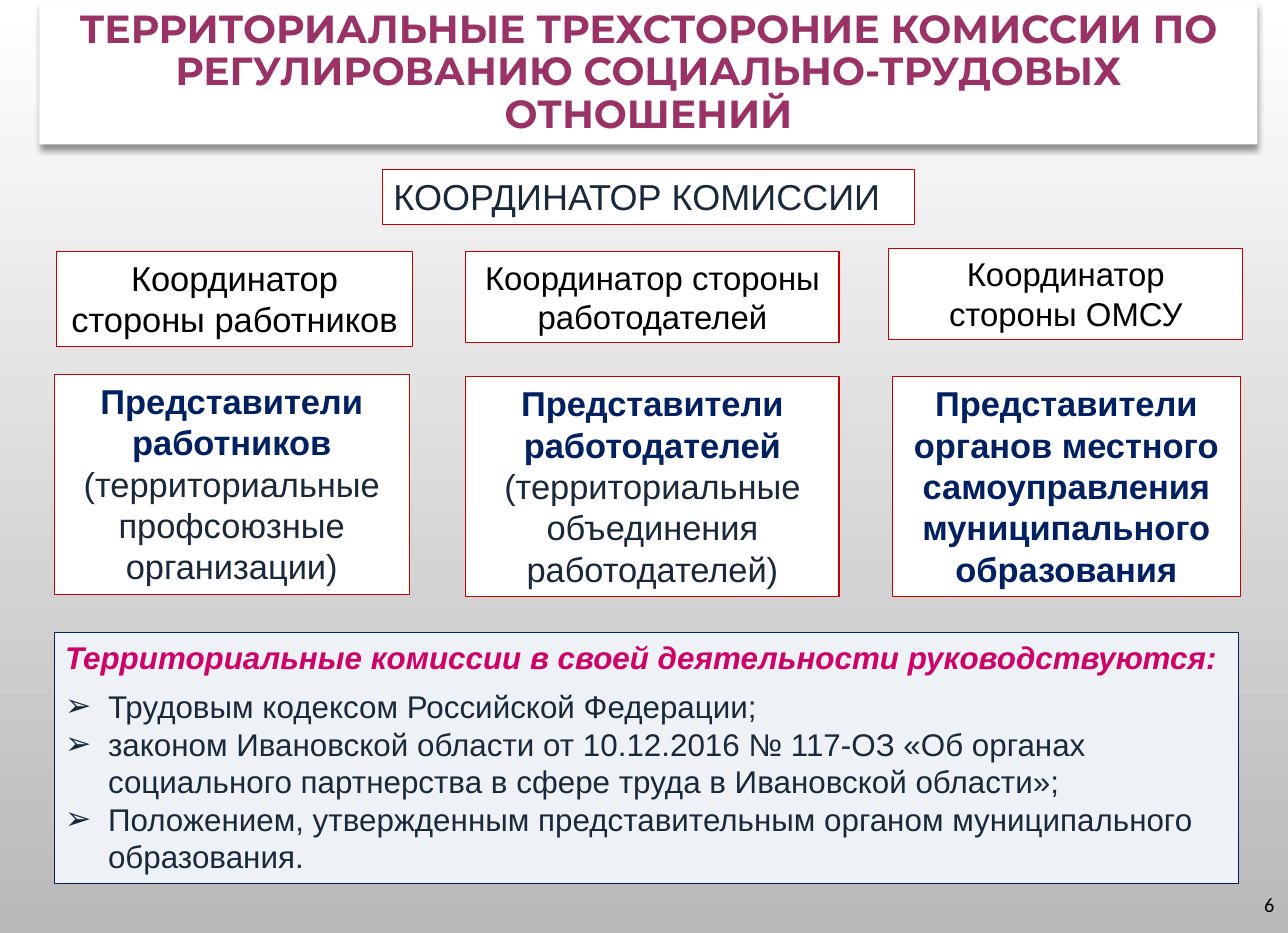
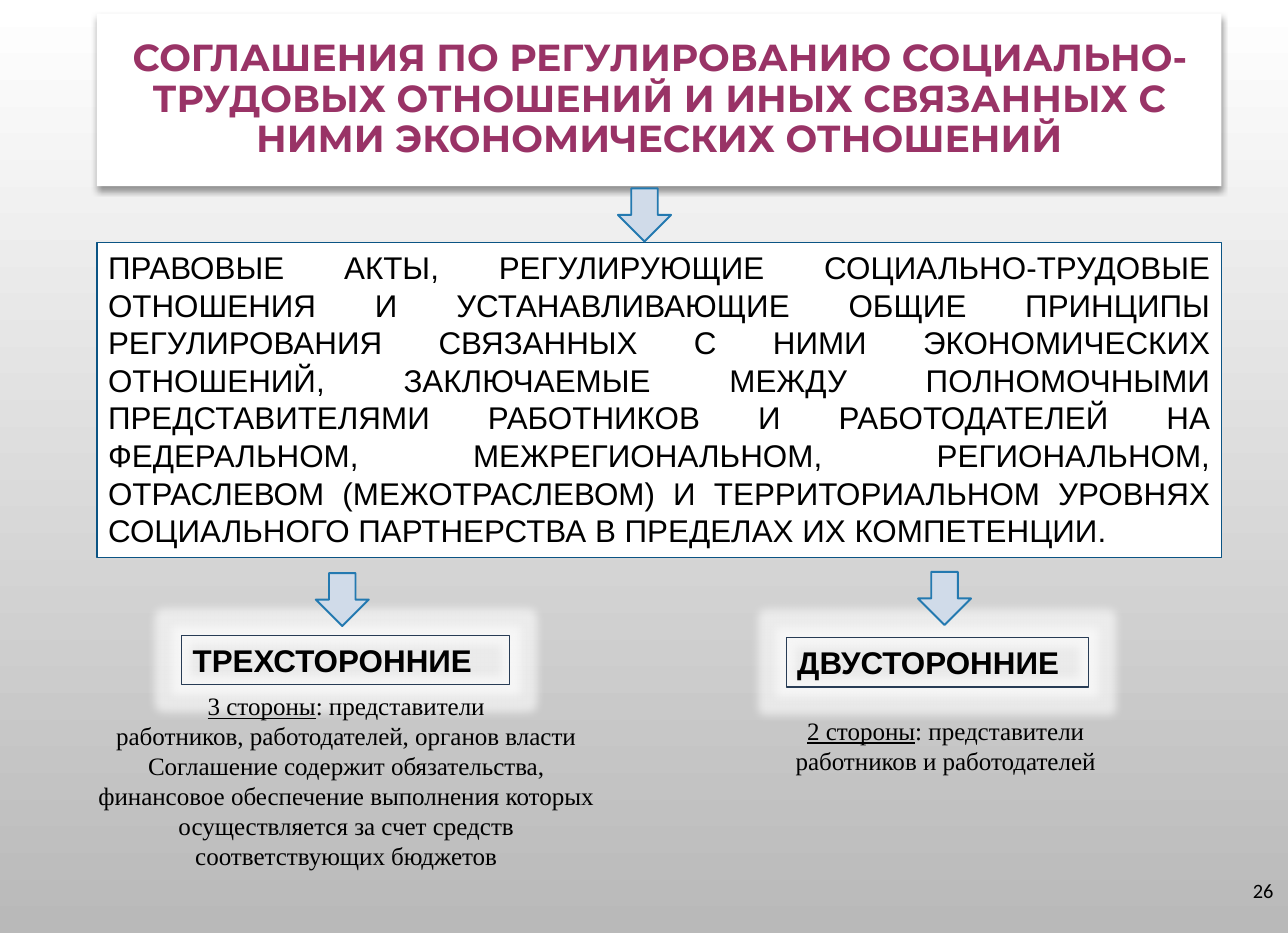
from lxml.etree import SubElement
from pptx import Presentation
from pptx.dml.color import RGBColor
from pptx.enum.shapes import MSO_SHAPE as Shape
from pptx.enum.text import MSO_ANCHOR as Anchor, MSO_AUTO_SIZE as AutoSize, PP_ALIGN as Align
from pptx.oxml.ns import qn
from pptx.util import Inches, Pt

BLACK, WHITE, SLATE, NAVY, RED = "000000", "FFFFFF", "1A2839", "002060", "C00000"
BACKGROUND = (WHITE, "B9B9B9")

STYLES = {
    "title": ({"name": "Montserrat", "bold": True}, "993366"),
    "number": ({"name": "Calibri", "size": Pt(13)}, BLACK),
    "plain": ({"name": "Arial"}, BLACK),
    "label": ({"name": "Arial", "bold": True}, BLACK),
    "body": ({"name": "Arial"}, SLATE),
    "strong": ({"name": "Arial", "bold": True}, NAVY),
    "lead": ({"name": "Arial", "bold": True, "italic": True}, "CC0066"),
    "note": ({"name": "Times New Roman"}, BLACK),
    "count": ({"name": "Times New Roman", "underline": True}, BLACK),
}
CENTER = {"alignment": Align.CENTER}
LEFT = {"alignment": Align.LEFT}
JUSTIFY = {"alignment": Align.JUSTIFY}
TITLE = {"alignment": Align.CENTER, "line_spacing": 0.9}
WIDE_INSETS = (0.13, 0.06)

COMMISSION = {
    "number": ("6", (10.71, 7.8, 0.72, 0.44)),
    "title": ("ТЕРРИТОРИАЛЬНЫЕ ТРЕХСТОРОНИЕ КОМИССИИ ПО РЕГУЛИРОВАНИЮ СОЦИАЛЬНО-ТРУДОВЫХ ОТНОШЕНИЙ",
              25, (0.35, 0.02, 10.8, 1.26)),
}
CHAIR = ("КООРДИНАТОР КОМИССИИ", (3.39, 1.5, 4.72, 0.49))
COORDINATORS = [
    ("Координатор стороны работников", 22, (0.5, 2.23, 3.16, 0.84)),
    ("Координатор стороны работодателей", 21, (4.13, 2.23, 3.31, 0.81)),
    ("Координатор стороны ОМСУ", 21, (7.88, 2.2, 3.14, 0.81)),
]
MEMBERS = [
    ([[("Представители работников ", "strong"),
       ("(территориальные профсоюзные организации)", "body")]], (0.48, 3.32, 3.15, 1.95)),
    ([[("Представители работодателей", "strong")],
      [("(территориальные объединения работодателей)", "body")]], (4.13, 3.34, 3.31, 1.95)),
    ([[("Представители органов местного самоуправления муниципального образования", "strong")]],
     (7.91, 3.34, 3.09, 1.95)),
]
GUIDES_AT = (0.48, 5.61, 10.5, 2.22)
GUIDES_LEAD = "Территориальные комиссии в своей деятельности руководствуются:"
GUIDES = [
    "Трудовым кодексом Российской Федерации;",
    "законом Ивановской области от 10.12.2016 № 117-ОЗ «Об органах социального партнерства "
    "в сфере труда в Ивановской области»;",
    "Положением, утвержденным представительным органом муниципального образования.",
]

AGREEMENTS = {
    "number": ("26", (10.7, 7.67, 0.72, 0.44)),
    "title": ("СОГЛАШЕНИЯ ПО РЕГУЛИРОВАНИЮ СОЦИАЛЬНО-ТРУДОВЫХ ОТНОШЕНИЙ И ИНЫХ СВЯЗАННЫХ С НИМИ "
              "ЭКОНОМИЧЕСКИХ ОТНОШЕНИЙ", 24, (0.86, 0.12, 9.97, 1.53)),
}
DEFINITION = (
    "ПРАВОВЫЕ АКТЫ, РЕГУЛИРУЮЩИЕ СОЦИАЛЬНО-ТРУДОВЫЕ ОТНОШЕНИЯ И УСТАНАВЛИВАЮЩИЕ ОБЩИЕ ПРИНЦИПЫ "
    "РЕГУЛИРОВАНИЯ СВЯЗАННЫХ С НИМИ ЭКОНОМИЧЕСКИХ ОТНОШЕНИЙ, ЗАКЛЮЧАЕМЫЕ МЕЖДУ ПОЛНОМОЧНЫМИ "
    "ПРЕДСТАВИТЕЛЯМИ РАБОТНИКОВ И РАБОТОДАТЕЛЕЙ НА ФЕДЕРАЛЬНОМ, МЕЖРЕГИОНАЛЬНОМ, РЕГИОНАЛЬНОМ, "
    "ОТРАСЛЕВОМ (МЕЖОТРАСЛЕВОМ) И ТЕРРИТОРИАЛЬНОМ УРОВНЯХ СОЦИАЛЬНОГО ПАРТНЕРСТВА В ПРЕДЕЛАХ "
    "ИХ КОМПЕТЕНЦИИ.", (0.86, 2.15, 9.97, 2.79))
KINDS = [
    ("ТРЕХСТОРОННИЕ", (1.61, 5.63, 2.91, 0.44), "3 стороны",
     ["работников, работодателей, органов власти",
      "Соглашение содержит обязательства, финансовое обеспечение выполнения которых "
      "осуществляется за счет средств соответствующих бюджетов"], (0.67, 6.07, 4.8, 1.72)),
    ("ДВУСТОРОННИЕ", (6.97, 5.65, 2.68, 0.44), "2 стороны",
     ["работников и работодателей"], (6.06, 6.29, 4.65, 0.64)),
]
ARROWS = [(5.48, 1.67), (2.8, 5.08), (8.14, 5.07)]
ARROW_SIZE = 0.47


def color(value):
    return RGBColor.from_string(value)


def add_effect(shape, kind, value, alpha, **sizes):
    effects = shape._element.spPr.find(qn("a:effectLst"))
    effect = SubElement(effects, qn(f"a:{kind}"), {key: str(size) for key, size in sizes.items()})
    tint = SubElement(effect, qn("a:srgbClr"), val=value)
    SubElement(tint, qn("a:alpha"), val=str(alpha * 1000))


def add_bullet(para):
    properties = para._p.get_or_add_pPr()
    properties.set("marL", str(Inches(0.38)))
    properties.set("indent", str(Inches(-0.38)))
    SubElement(properties, qn("a:buFont"), typeface="Arial")
    SubElement(properties, qn("a:buChar"), char="➢")


def add_shape(page, at, fill=None, line=None, width=0.75, preset=Shape.RECTANGLE):
    shape = page.shapes.add_shape(preset, *map(Inches, at))
    shape.shadow.inherit = False
    if fill:
        shape.fill.solid()
        shape.fill.fore_color.rgb = color(fill)
    else:
        shape.fill.background()
    if line:
        shape.line.color.rgb = color(line)
        shape.line.width = Pt(width)
    else:
        shape.line.fill.background()
    return shape


def write(box, paragraphs, size, layout=CENTER, anchor=Anchor.TOP, insets=(0.1, 0.05),
          fit=AutoSize.NONE):
    frame = box.text_frame
    side, edge = map(Inches, insets)
    settings = {"word_wrap": True, "auto_size": fit, "vertical_anchor": anchor,
                "margin_left": side, "margin_right": side,
                "margin_top": edge, "margin_bottom": edge}
    for key, value in settings.items():
        setattr(frame, key, value)
    for index, spans in enumerate(paragraphs):
        para = frame.add_paragraph() if index else frame.paragraphs[0]
        for key, value in layout.items():
            setattr(para, key, value)
        for text, style in spans:
            span = para.add_run()
            span.text = text
            formats, tint = STYLES[style]
            for key, value in {"size": Pt(size), **formats}.items():
                setattr(span.font, key, value)
            span.font.color.rgb = color(tint)
    return frame


def add_text(page, at, paragraphs, size, **options):
    box = page.shapes.add_textbox(*map(Inches, at))
    return write(box, paragraphs, size, **options)


def add_page(deck, content):
    page = deck.slides.add_slide(deck.slide_layouts[6])
    number, number_at = content["number"]
    add_text(page, number_at, [[(number, "number")]], 13, layout={"alignment": Align.RIGHT},
             anchor=Anchor.MIDDLE, insets=WIDE_INSETS)
    text, size, at = content["title"]
    banner = add_shape(page, at, WHITE)
    add_effect(banner, "outerShdw", BLACK, 40, blurRad=Pt(4), dist=Pt(3), dir=5400000,
               algn="t", rotWithShape=0)
    write(banner, [[(text, "title")]], size, layout=TITLE, anchor=Anchor.MIDDLE,
          insets=WIDE_INSETS)
    return page


def build_commission(deck):
    page = add_page(deck, COMMISSION)
    text, at = CHAIR
    write(add_shape(page, at, WHITE, RED), [[(text, "body")]], 23, layout=LEFT)
    for text, size, at in COORDINATORS:
        write(add_shape(page, at, WHITE, RED), [[(text, "plain")]], size)
    for paragraphs, at in MEMBERS:
        write(add_shape(page, at, WHITE, RED), paragraphs, 22)
    paragraphs = [[(GUIDES_LEAD, "lead")]] + [[(guide, "body")] for guide in GUIDES]
    frame = write(add_shape(page, GUIDES_AT, "EEF2F7", NAVY), paragraphs, 20, layout=LEFT)
    for para in frame.paragraphs[1:]:
        add_bullet(para)
    frame.paragraphs[1].space_before = Pt(7)


def build_agreements(deck):
    page = add_page(deck, AGREEMENTS)
    text, at = DEFINITION
    write(add_shape(page, at, WHITE, "0B5484"), [[(text, "plain")]], 20, layout=JUSTIFY)
    for name, name_at, count, lines, note_at in KINDS:
        label = add_shape(page, name_at, line="283C55")
        add_effect(label, "glow", WHITE, 60, rad=Inches(0.16))
        write(label, [[(name, "label")]], 20, layout=LEFT)
        paragraphs = [[(count, "count"), (": представители", "note")]]
        paragraphs += [[(line, "note")] for line in lines]
        add_text(page, note_at, paragraphs, 16, fit=AutoSize.SHAPE_TO_FIT_TEXT)
    for left, top in ARROWS:
        add_shape(page, (left, top, ARROW_SIZE, ARROW_SIZE), "D0DBE9", "2379B0", 1.25,
                  Shape.DOWN_ARROW)


def main():
    deck = Presentation()
    deck.slide_width, deck.slide_height = Inches(11.42), Inches(8.27)
    fill = deck.slide_master.background.fill
    fill.gradient()
    fill.gradient_angle = 270
    for stop, value in zip(fill.gradient_stops, BACKGROUND):
        stop.color.rgb = color(value)
    build_commission(deck)
    build_agreements(deck)
    deck.save("out.pptx")


if __name__ == "__main__":
    main()
